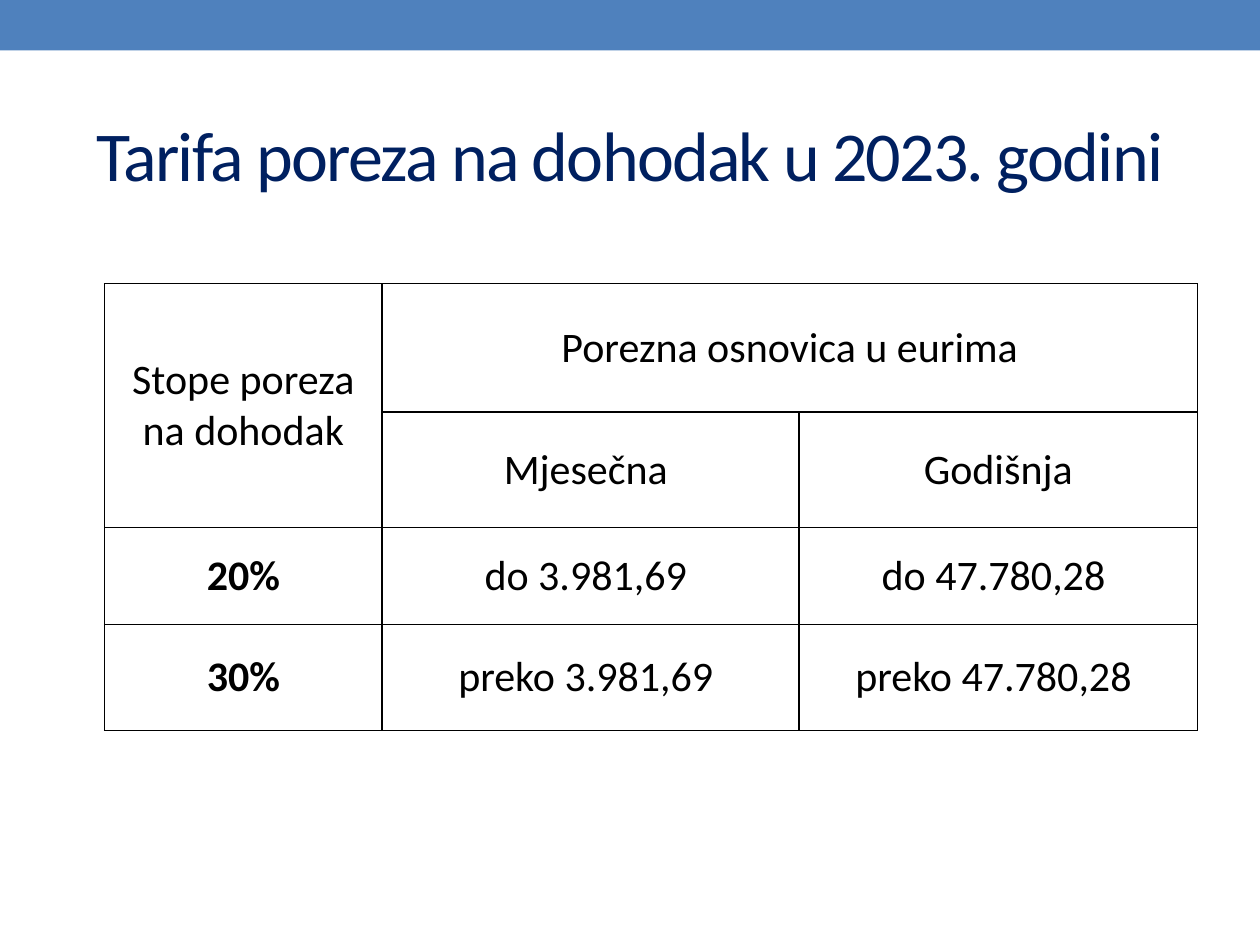
"""Build a slide with the 2023 income tax rates table."""
from lxml.etree import SubElement
from pptx import Presentation
from pptx.dml.color import RGBColor
from pptx.enum.shapes import MSO_SHAPE
from pptx.enum.text import MSO_ANCHOR, PP_ALIGN
from pptx.oxml.ns import qn
from pptx.util import Cm, Pt

COLORS = {"band": "4F81BD", "heading": "002060", "text": "000000", "border": "000000"}
HEADING_FONT = {"name": "Calibri", "size": Pt(40), "bold": False}
CELL_FONT = {"name": "Calibri", "size": Pt(24)}
COLUMN_WIDTHS = [5.59, 8.41, 8.03]
ROW_HEIGHTS = [2.59, 1.19, 1.96, 2.13]
ROWS = [
    ["Stope poreza na dohodak", "Porezna osnovica u eurima", ""],
    ["", "Mjesečna ", "Godišnja"],
    ["20%", "do 3.981,69 ", "do 47.780,28 "],
    ["30%", "preko 3.981,69 ", "preko 47.780,28 "],
]

prs = Presentation()
prs.slide_width, prs.slide_height = Cm(25.4), Cm(19.05)
slide = prs.slides.add_slide(prs.slide_layouts[5])

band = slide.shapes.add_shape(MSO_SHAPE.RECTANGLE, 0, 0, prs.slide_width, Cm(1.02))
band.shadow.inherit = False
band.fill.solid()
band.fill.fore_color.rgb = RGBColor.from_string(COLORS["band"])
band.line.fill.background()

heading = slide.shapes.title
heading.left, heading.top, heading.width, heading.height = Cm(1.27), Cm(1.47), Cm(22.86), Cm(3.25)
heading.text_frame.text = "Tarifa poreza na dohodak u 2023. godini"
heading.text_frame.vertical_anchor = MSO_ANCHOR.MIDDLE
heading_line = heading.text_frame.paragraphs[0]
heading_line.alignment = PP_ALIGN.CENTER
heading_run = heading_line.runs[0]
for attribute, value in HEADING_FONT.items():
    setattr(heading_run.font, attribute, value)
heading_run.font.color.rgb = RGBColor.from_string(COLORS["heading"])
heading_run.font._element.set("spc", "-100")

rates = slide.shapes.add_table(
    len(ROWS), len(COLUMN_WIDTHS), Cm(2.11), Cm(5.72),
    Cm(sum(COLUMN_WIDTHS)), Cm(sum(ROW_HEIGHTS)),
).table
rates.first_row = rates.horz_banding = False
for column, width in zip(rates.columns, COLUMN_WIDTHS):
    column.width = Cm(width)
for row, height in zip(rates.rows, ROW_HEIGHTS):
    row.height = Cm(height)
rates.cell(0, 0).merge(rates.cell(1, 0))
rates.cell(0, 1).merge(rates.cell(0, 2))

for row_index, entries in enumerate(ROWS):
    for column_index, entry in enumerate(entries):
        cell = rates.cell(row_index, column_index)
        cell.vertical_anchor = MSO_ANCHOR.MIDDLE
        properties = cell._tc.get_or_add_tcPr()
        for side in ("lnL", "lnR", "lnT", "lnB"):
            border = SubElement(properties, qn(f"a:{side}"), w=str(Pt(1)))
            border_fill = SubElement(border, qn("a:solidFill"))
            SubElement(border_fill, qn("a:srgbClr"), val=COLORS["border"])
        cell.fill.background()
        if entry:
            cell.text = entry
            paragraph = cell.text_frame.paragraphs[0]
            paragraph.alignment = PP_ALIGN.CENTER
            font = paragraph.runs[0].font
            for attribute, value in CELL_FONT.items():
                setattr(font, attribute, value)
            font.bold = entry.endswith("%")
            font.color.rgb = RGBColor.from_string(COLORS["text"])

prs.save("out.pptx")
